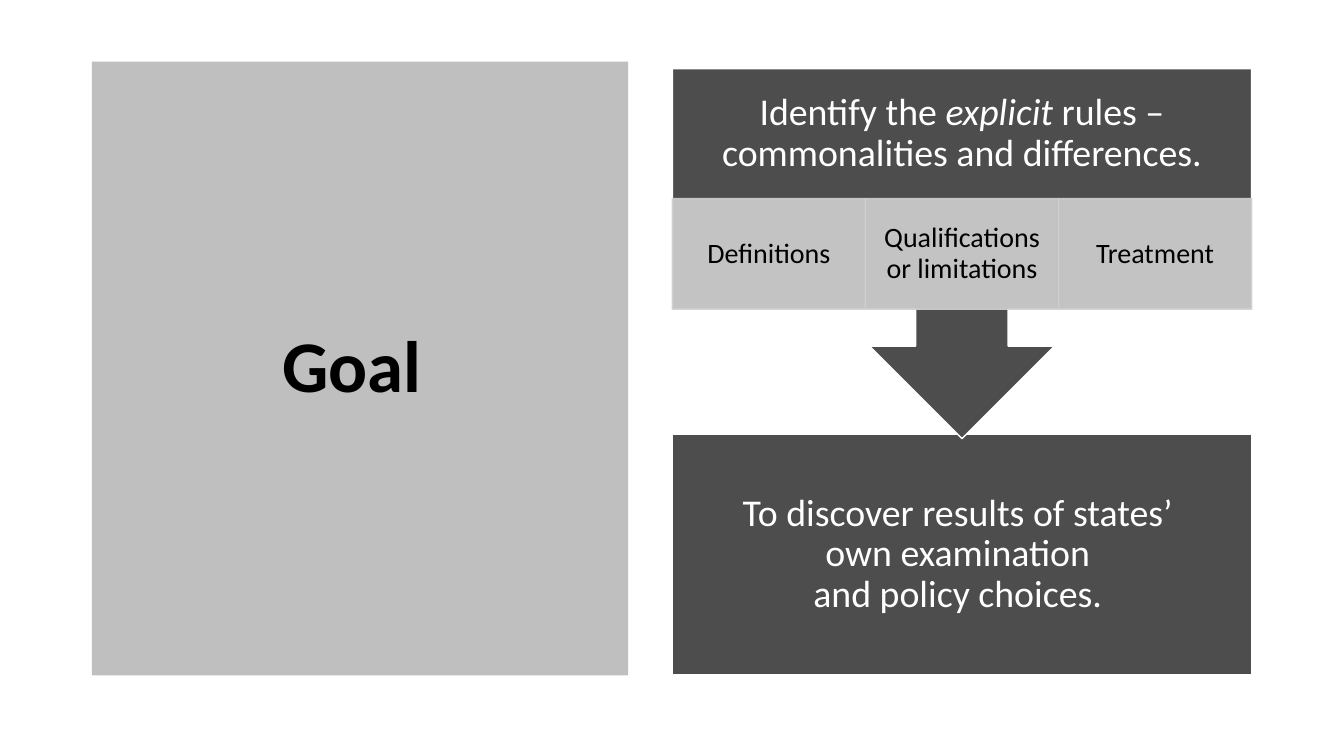
"""Build the Goal slide: a title panel beside a callout leading to its result."""
from lxml.etree import SubElement
from pptx import Presentation
from pptx.dml.color import RGBColor
from pptx.enum.shapes import MSO_SHAPE as Preset
from pptx.enum.text import MSO_ANCHOR as Anchor, MSO_AUTO_SIZE as AutoSize, PP_ALIGN as Align
from pptx.oxml.ns import qn
from pptx.util import Pt

GOAL = "Goal "
RULES = ["Identify the ", ("explicit",), " rules – commonalities and differences."]
ASPECTS = ["Definitions", "Qualifications or limitations", "Treatment"]
RESULT = ["To discover results of states’ ", "\n", "own examination ", "\n", "and policy choices. "]

WHITE, BLACK, DARK, PANEL, TINT = "FFFFFF", "000000", "4D4D4D", "BFBFBF", "D0D0D0"
LEFT, WIDTH = 480.3, 413.7
RULES_TOP, RULES_HEIGHT = 49, 264.3
ASPECT_TOP, ASPECT_HEIGHT = 141.9, 79.1
RESULT_TOP, RESULT_HEIGHT = 310.4, 171.6
CALLOUT_BODY = 0.64977


def color(value):
    return RGBColor.from_string(value)


def write(shape, pieces, size=27, ink=WHITE, bold=None, insets=(15, 15, 15, 15)):
    frame = shape.text_frame
    frame.word_wrap = True
    frame.auto_size = AutoSize.NONE
    frame.vertical_anchor = Anchor.MIDDLE
    frame.margin_left, frame.margin_top, frame.margin_right, frame.margin_bottom = map(Pt, insets)
    line = frame.paragraphs[0]
    line.alignment = Align.CENTER
    line.line_spacing = 0.9
    for piece in pieces:
        if piece == "\n":
            line.add_line_break()
            continue
        run = line.add_run()
        emphasized = isinstance(piece, tuple)
        run.text = piece[0] if emphasized else piece
        font = run.font
        font.name, font.size, font.bold = "Calibri", Pt(size), bold
        font.italic = emphasized or None
        font.color.rgb = color(ink)


def add_block(preset, box, fill, outline, opacity=None):
    block = slide.shapes.add_shape(preset, *map(Pt, box))
    block.shadow.inherit = False
    block.fill.solid()
    block.fill.fore_color.rgb = color(fill)
    block.line.color.rgb = color(outline)
    block.line.width = Pt(1)
    if opacity:
        for tint in block._element.spPr.iter(qn("a:srgbClr")):
            SubElement(tint, qn("a:alpha"), val=str(opacity * 1000))
    return block


deck = Presentation()
deck.slide_width, deck.slide_height = Pt(960), Pt(540)
slide = deck.slides.add_slide(deck.slide_layouts[5])

goal = slide.shapes.title
goal.left, goal.top, goal.width, goal.height = map(Pt, (65.7, 44, 383, 438.4))
goal.fill.solid()
goal.fill.fore_color.rgb = color(PANEL)
write(goal, [GOAL], size=52, ink=BLACK, bold=True, insets=(7.2, 3.6, 7.2, 3.6))

result = add_block(Preset.RECTANGLE, (LEFT, RESULT_TOP, WIDTH, RESULT_HEIGHT), DARK, WHITE)
write(result, RESULT)

rules = add_block(Preset.DOWN_ARROW_CALLOUT, (LEFT, RULES_TOP, WIDTH, RULES_HEIGHT), DARK, WHITE)
below_text = RULES_TOP + RULES_HEIGHT * CALLOUT_BODY - ASPECT_TOP
write(rules, RULES, insets=(15, 15, 15, 15 + below_text))

aspect_width = WIDTH / len(ASPECTS)
for column, name in enumerate(ASPECTS):
    box = (LEFT + column * aspect_width, ASPECT_TOP, aspect_width, ASPECT_HEIGHT)
    aspect = add_block(Preset.RECTANGLE, box, TINT, TINT, opacity=90)
    write(aspect, [name], size=20, ink=BLACK, insets=(11.5, 2, 11.5, 2))

deck.save("out.pptx")
